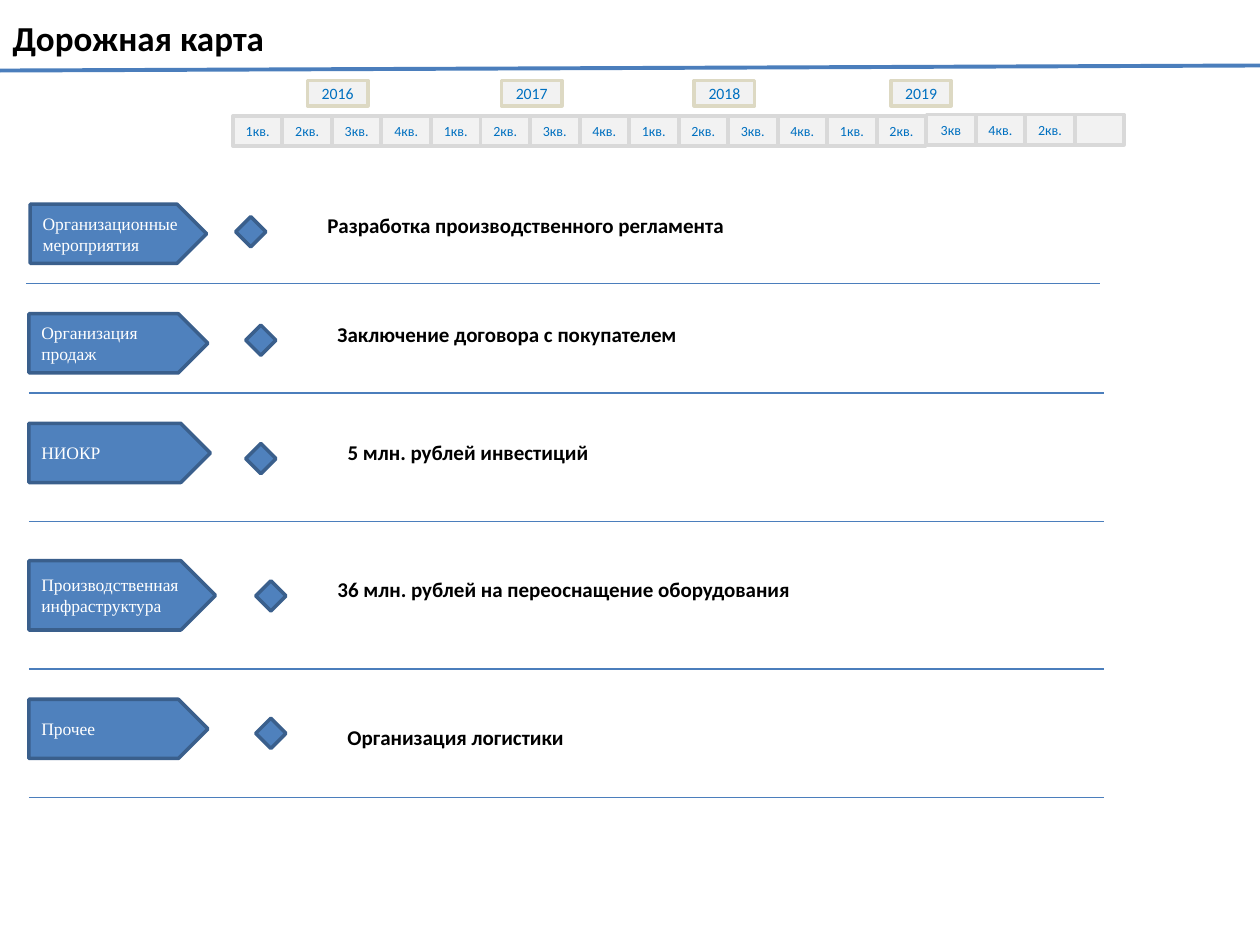
"""Build the project roadmap slide."""
from dataclasses import dataclass

from lxml import etree
from pptx import Presentation
from pptx.dml.color import RGBColor
from pptx.enum.shapes import MSO_CONNECTOR, MSO_SHAPE
from pptx.enum.text import MSO_ANCHOR, MSO_AUTO_SIZE, PP_ALIGN
from pptx.oxml.ns import qn
from pptx.shapes.autoshape import Shape
from pptx.slide import Slide
from pptx.text.text import TextFrame
from pptx.util import Inches, Pt

RECTANGLE = MSO_SHAPE.RECTANGLE
PENTAGON = MSO_SHAPE.PENTAGON
DIAMOND = MSO_SHAPE.DIAMOND
STRAIGHT = MSO_CONNECTOR.STRAIGHT
MIDDLE = MSO_ANCHOR.MIDDLE
LEFT = PP_ALIGN.LEFT
CENTER = PP_ALIGN.CENTER
GROW = MSO_AUTO_SIZE.SHAPE_TO_FIT_TEXT
NO_AUTOSIZE = MSO_AUTO_SIZE.NONE

BLACK = RGBColor(0x00, 0x00, 0x00)
WHITE = RGBColor(0xFF, 0xFF, 0xFF)
BLUE = RGBColor(0x4F, 0x81, 0xBD)
DARK_BLUE = RGBColor(0x3A, 0x5F, 0x8C)
RULE_BLUE = RGBColor(0x4B, 0x7E, 0xBC)
TEXT_BLUE = RGBColor(0x00, 0x70, 0xC0)
PALE_GRAY = RGBColor(0xF2, 0xF2, 0xF2)
BORDER_GRAY = RGBColor(0xD9, 0xD9, 0xD9)
BORDER_TAN = RGBColor(0xDD, 0xD9, 0xC3)

TITLE_FONT = {"name": "Calibri", "size": Pt(20), "bold": True}
STAGE_FONT = {"name": "Times New Roman", "size": Pt(10)}
QUARTER_FONT = {"name": "Calibri", "size": Pt(8)}
YEAR_FONT = {"name": "Calibri", "size": Pt(9)}
TASK_FONT = {"name": "Calibri", "size": Pt(12), "bold": True}
NO_MARGINS = {"margin_left": 0, "margin_right": 0, "margin_top": 0, "margin_bottom": 0}

QUARTER_LEFT = 1.85
QUARTER_STEP = 0.393
QUARTERS = ["1кв.", "2кв.", "3кв.", "4кв."] * 3 + ["1кв.", "2кв.", "3кв", "4кв.", "2кв.", ""]
RAISED_FROM = 14
YEARS = {"2016": 2.44, "2017": 3.98, "2018": 5.51, "2019": 7.07}


@dataclass
class Box:
    left: float
    top: float
    width: float
    height: float


@dataclass
class Stage:
    label: str
    arrow: Box
    marker_left: float
    marker_top: float
    task: str
    task_box: Box
    rule_left: float
    rule_right: float
    rule_top: float


STAGES = [
    Stage("Организационные мероприятия", Box(0.24, 1.62, 1.4, 0.47), 1.87, 1.72,
          "Разработка производственного регламента", Box(2.5, 1.64, 3.67, 0.3), 0.21, 8.73, 2.25),
    Stage("Организация продаж", Box(0.23, 2.49, 1.42, 0.47), 1.95, 2.58,
          "Заключение договора с покупателем", Box(2.58, 2.5, 5.31, 0.3), 0.23, 8.76, 3.12),
    Stage("НИОКР", Box(0.23, 3.36, 1.44, 0.47), 1.95, 3.52,
          "5 млн. рублей инвестиций", Box(2.66, 3.44, 3.12, 0.3), 0.23, 8.76, 4.14),
    Stage("Производственная инфраструктура", Box(0.23, 4.45, 1.48, 0.55), 2.03, 4.61,
          "36 млн. рублей на переоснащение оборудования", Box(2.58, 4.53, 4.77, 0.3),
          0.23, 8.76, 5.31),
    Stage("Прочее", Box(0.23, 5.55, 1.42, 0.47), 2.03, 5.7,
          "Организация логистики", Box(2.66, 5.7, 2.73, 0.3), 0.23, 8.76, 6.33),
]


def set_attributes(target: object, values: dict) -> None:
    for name, value in values.items():
        setattr(target, name, value)


def lengths(box: Box) -> tuple:
    return Inches(box.left), Inches(box.top), Inches(box.width), Inches(box.height)


def write(frame: TextFrame, text: str, font: dict, color: RGBColor,
          alignment: PP_ALIGN = LEFT) -> None:
    frame.word_wrap = True
    paragraph = frame.paragraphs[0]
    paragraph.alignment = alignment
    run = paragraph.add_run()
    run.text = text
    set_attributes(run.font, font)
    run.font.color.rgb = color


def add_block(slide: Slide, preset: MSO_SHAPE, box: Box, fill: RGBColor,
              border: RGBColor) -> Shape:
    shape = slide.shapes.add_shape(preset, *lengths(box))
    shape.shadow.inherit = False
    shape.fill.solid()
    shape.fill.fore_color.rgb = fill
    shape.line.color.rgb = border
    shape.line.width = Pt(2)
    shape.text_frame.vertical_anchor = MIDDLE
    return shape


def add_period(slide: Slide, box: Box, border: RGBColor, text: str, font: dict) -> None:
    shape = add_block(slide, RECTANGLE, box, PALE_GRAY, border)
    set_attributes(shape.text_frame, NO_MARGINS)
    if text:
        write(shape.text_frame, text, font, TEXT_BLUE, CENTER)


def add_rule(slide: Slide, start: tuple[float, float], end: tuple[float, float],
             width: float) -> None:
    points = [Inches(value) for value in (*start, *end)]
    connector = slide.shapes.add_connector(STRAIGHT, *points)
    connector.line.color.rgb = RULE_BLUE
    connector.line.width = Pt(width)
    etree.SubElement(connector._element.spPr, qn("a:effectLst"))


def add_title(slide: Slide) -> None:
    title = slide.shapes.title
    left, top, width, height = lengths(Box(0, 0, 9.41, 0.6))
    set_attributes(title, {"left": left, "top": top, "width": width, "height": height})
    set_attributes(title.text_frame, {"vertical_anchor": MIDDLE, "auto_size": NO_AUTOSIZE})
    write(title.text_frame, "Дорожная карта", TITLE_FONT, BLACK)


def add_stage(slide: Slide, stage: Stage) -> None:
    arrow = add_block(slide, PENTAGON, stage.arrow, BLUE, DARK_BLUE)
    write(arrow.text_frame, stage.label, STAGE_FONT, WHITE)
    marker = Box(stage.marker_left, stage.marker_top, 0.24, 0.24)
    add_block(slide, DIAMOND, marker, BLUE, DARK_BLUE)
    task = slide.shapes.add_textbox(*lengths(stage.task_box))
    write(task.text_frame, stage.task, TASK_FONT, BLACK)
    task.text_frame.auto_size = GROW
    add_rule(slide, (stage.rule_left, stage.rule_top), (stage.rule_right, stage.rule_top), 0.75)


def main() -> None:
    presentation = Presentation()
    presentation.slide_width = Inches(10)
    presentation.slide_height = Inches(7.5)
    slide = presentation.slides.add_slide(presentation.slide_layouts[5])
    add_title(slide)
    add_rule(slide, (0, 0.56), (10, 0.52), 2.25)
    for index, quarter in enumerate(QUARTERS):
        top = 0.91 if index >= RAISED_FROM else 0.92
        box = Box(QUARTER_LEFT + index * QUARTER_STEP, top, 0.39, 0.24)
        add_period(slide, box, BORDER_GRAY, quarter, QUARTER_FONT)
    for year, left in YEARS.items():
        add_period(slide, Box(left, 0.64, 0.48, 0.2), BORDER_TAN, year, YEAR_FONT)
    for stage in STAGES:
        add_stage(slide, stage)
    presentation.save("out.pptx")


if __name__ == "__main__":
    main()
